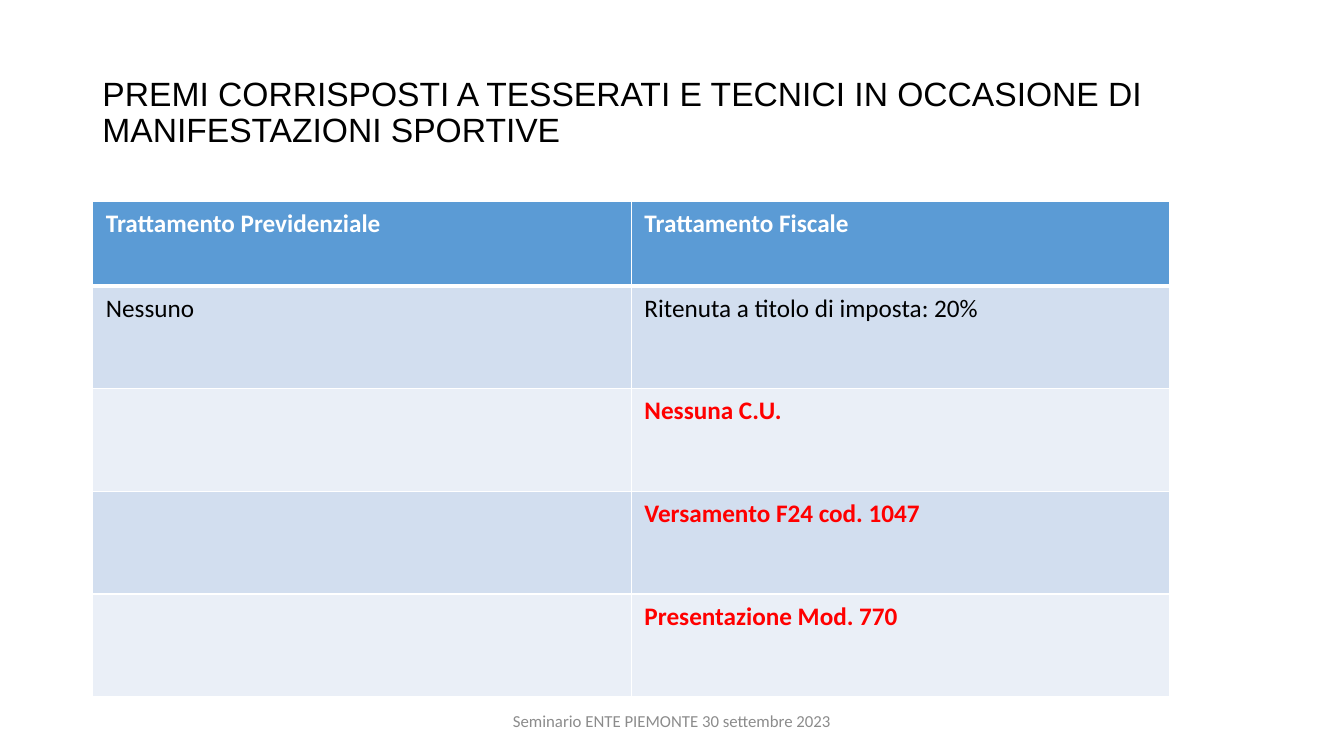
from lxml import etree
from pptx import Presentation
from pptx.dml.color import RGBColor
from pptx.enum.text import MSO_ANCHOR, MSO_AUTO_SIZE, PP_ALIGN
from pptx.oxml.ns import qn
from pptx.util import Pt

LEFT, CENTER = PP_ALIGN.LEFT, PP_ALIGN.CENTER
MIDDLE = MSO_ANCHOR.MIDDLE
NO_AUTOFIT = MSO_AUTO_SIZE.NONE

WHITE = RGBColor(0xFF, 0xFF, 0xFF)
BLACK = RGBColor(0x00, 0x00, 0x00)
RED = RGBColor(0xFF, 0x00, 0x00)
GREY = RGBColor(0x8C, 0x8C, 0x8C)
HEADER_BLUE = RGBColor(0x5B, 0x9B, 0xD5)
BAND_DARK = RGBColor(0xD2, 0xDE, 0xEF)
BAND_LIGHT = RGBColor(0xEA, 0xEF, 0xF7)

TITLE = "PREMI CORRISPOSTI A TESSERATI E TECNICI IN OCCASIONE DI MANIFESTAZIONI SPORTIVE"
FOOTER = "Seminario ENTE PIEMONTE 30 settembre 2023"

# Each row: texts, font colour, bold
TREATMENTS = [
    (("Trattamento Previdenziale", "Trattamento Fiscale"), WHITE, True),
    (("Nessuno", "Ritenuta a titolo di imposta: 20%"), BLACK, False),
    (("", "Nessuna C.U."), RED, True),
    (("", "Versamento F24 cod. 1047"), RED, True),
    (("", "Presentazione Mod. 770"), RED, True),
]
COLUMN_WIDTH = 384.7
HEADER_HEIGHT, ROW_HEIGHT = 60.3, 73.3


def format_text(text_frame, font_name, size, color, bold=False):
    for paragraph in text_frame.paragraphs:
        for run in paragraph.runs:
            run.font.name = font_name
            run.font.size = Pt(size)
            run.font.color.rgb = color
            run.font.bold = bold


def add_title(slide):
    title = slide.shapes.title
    title.left, title.top = Pt(66), Pt(28.8)
    title.width, title.height = Pt(828), Pt(104.4)
    frame = title.text_frame
    frame.text = TITLE
    frame.word_wrap = True
    frame.auto_size = NO_AUTOFIT
    frame.vertical_anchor = MIDDLE
    frame.paragraphs[0].alignment = LEFT
    frame.paragraphs[0].line_spacing = 0.9
    format_text(frame, "Arial", 24, BLACK)


def set_border(cell, side, width):
    line = etree.SubElement(cell._tc.get_or_add_tcPr(), qn(f"a:{side}"), w=str(Pt(width)))
    fill = etree.SubElement(line, qn("a:solidFill"))
    etree.SubElement(fill, qn("a:srgbClr"), val=str(WHITE))


def style_cell(cell, row):
    # Borders come before the fill in the cell properties
    widths = {"lnL": 1, "lnR": 1, "lnT": 3 if row == 1 else 1, "lnB": 3 if row == 0 else 1}
    for side, width in widths.items():
        set_border(cell, side, width)
    cell.fill.solid()
    if row == 0:
        cell.fill.fore_color.rgb = HEADER_BLUE
    else:
        cell.fill.fore_color.rgb = BAND_DARK if row % 2 else BAND_LIGHT
    cell.margin_left = cell.margin_right = Pt(9.36)
    cell.margin_top = cell.margin_bottom = Pt(5)


def add_treatment_table(slide):
    height = HEADER_HEIGHT + ROW_HEIGHT * (len(TREATMENTS) - 1)
    table = slide.shapes.add_table(
        len(TREATMENTS), 2, Pt(66.3), Pt(144.2), Pt(COLUMN_WIDTH * 2), Pt(height)
    ).table
    for column in table.columns:
        column.width = Pt(COLUMN_WIDTH)
    for row, (texts, color, bold) in enumerate(TREATMENTS):
        table.rows[row].height = Pt(ROW_HEIGHT if row else HEADER_HEIGHT)
        for column, text in enumerate(texts):
            cell = table.cell(row, column)
            style_cell(cell, row)
            if text:
                cell.text_frame.text = text
                format_text(cell.text_frame, "Calibri", 18, color, bold)


def add_footer(slide):
    frame = slide.shapes.add_textbox(Pt(318), Pt(500.5), Pt(324), Pt(28.8)).text_frame
    frame.text = FOOTER
    frame.word_wrap = True
    frame.vertical_anchor = MIDDLE
    frame.paragraphs[0].alignment = CENTER
    format_text(frame, "Calibri", 12, GREY)


def main():
    presentation = Presentation()
    presentation.slide_width, presentation.slide_height = Pt(960), Pt(540)
    title_only = presentation.slide_layouts[5]
    slide = presentation.slides.add_slide(title_only)
    add_title(slide)
    add_treatment_table(slide)
    add_footer(slide)
    presentation.save("out.pptx")


if __name__ == "__main__":
    main()
